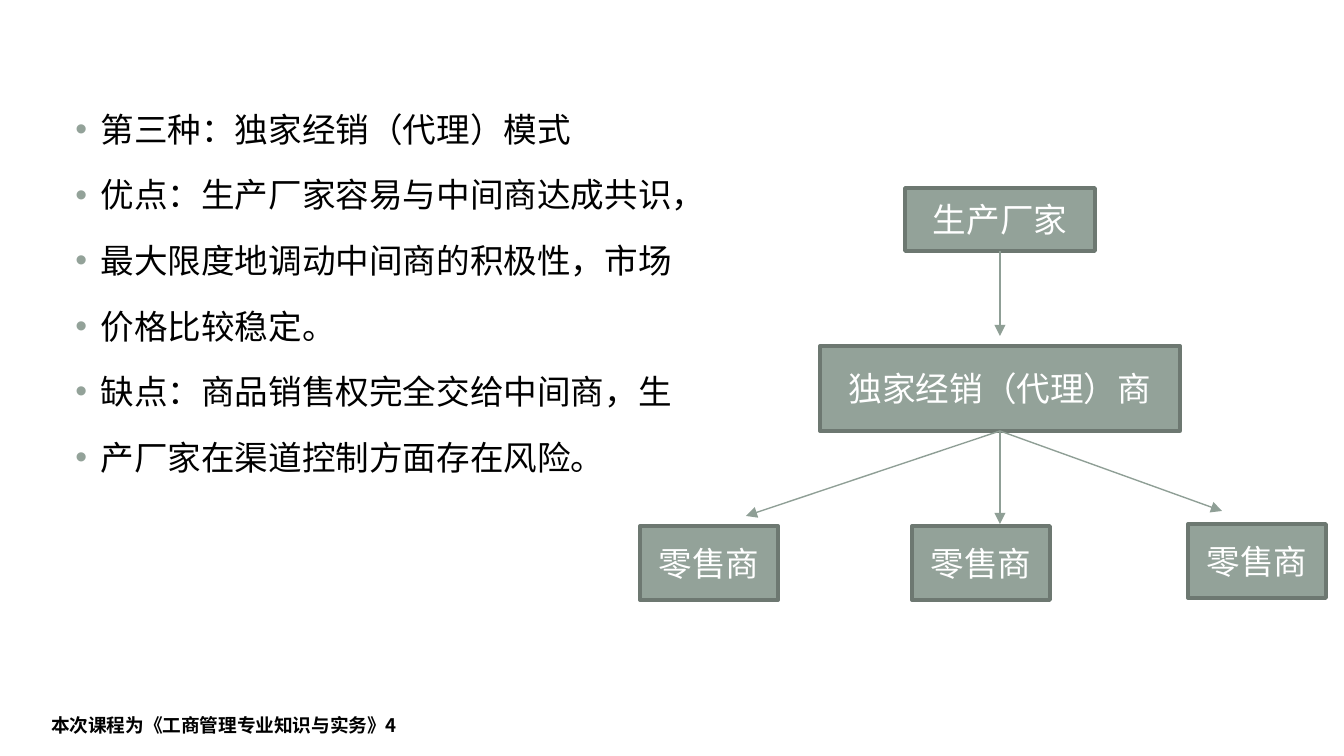
from lxml.etree import SubElement
from pptx import Presentation
from pptx.dml.color import RGBColor
from pptx.enum.shapes import MSO_CONNECTOR, MSO_SHAPE
from pptx.enum.text import MSO_ANCHOR, MSO_AUTO_SIZE, PP_ALIGN
from pptx.oxml.ns import qn
from pptx.util import Pt

EMU_PER_PX = 914400 / 134.4
BLACK = RGBColor(0x00, 0x00, 0x00)
WHITE = RGBColor(0xFF, 0xFF, 0xFF)
SAGE = RGBColor(0x93, 0xA2, 0x99)
DARK_SAGE = RGBColor(0x6D, 0x78, 0x71)
ARROW_SAGE = RGBColor(0x8F, 0x9F, 0x96)
TEXT_FONT = "Noto Sans CJK SC"
BOX_FONT = "Quicksand"
BOTTOM = 2

POINTS = [
    "第三种：独家经销（代理）模式",
    "优点：生产厂家容易与中间商达成共识，",
    "最大限度地调动中间商的积极性，市场",
    "价格比较稳定。",
    "缺点：商品销售权完全交给中间商，生",
    "产厂家在渠道控制方面存在风险。",
]
RETAILER_CORNERS = [(640, 526), (912, 526), (1188, 524)]
RETAILER_ARROW_ENDS = [(746, 516), (1000, 524), (1222, 511)]


def px(*lengths):
    """Turn pixel lengths into a list of EMU."""
    return [round(length * EMU_PER_PX) for length in lengths]


def format_paragraph(paragraph, size, color, font_name, bold=False):
    for span in paragraph.runs:
        span.font.size = Pt(size)
        span.font.bold = bold
        span.font.color.rgb = color
        span.font.name = font_name
        if font_name == TEXT_FONT:
            SubElement(span.font._element, qn("a:ea"), typeface=font_name)


def add_bullet(paragraph):
    properties = paragraph._p.get_or_add_pPr()
    indent, hanging = px(37, -25)
    properties.set("marL", str(indent))
    properties.set("indent", str(hanging))
    color = SubElement(properties, qn("a:buClr"))
    SubElement(color, qn("a:srgbClr"), val=str(SAGE))
    SubElement(properties, qn("a:buFont"), typeface="Arial")
    SubElement(properties, qn("a:buChar"), char="•")


def fill_body(body):
    body.left, body.top, body.width, body.height = px(50, 82, 1294, 593)
    frame = body.text_frame
    frame.text = "\n".join(POINTS)
    frame.auto_size = MSO_AUTO_SIZE.NONE
    frame.vertical_anchor = MSO_ANCHOR.TOP
    for paragraph in frame.paragraphs:
        paragraph.line_spacing = 1.5
        paragraph.space_before = Pt(2.7)
        add_bullet(paragraph)
        format_paragraph(paragraph, 18, BLACK, TEXT_FONT)


def add_footer(slide):
    footer = slide.shapes.add_textbox(*px(38, 707, 848, 36))
    frame = footer.text_frame
    frame.word_wrap = True
    frame.text = "本次课程为《工商管理专业知识与实务》4"
    format_paragraph(frame.paragraphs[0], 10, BLACK, TEXT_FONT, bold=True)


def add_box(slide, text, left, top, width, height):
    box = slide.shapes.add_shape(MSO_SHAPE.RECTANGLE, *px(left, top, width, height))
    box.shadow.inherit = False
    box.fill.solid()
    box.fill.fore_color.rgb = SAGE
    box.line.color.rgb = DARK_SAGE
    box.line.width = Pt(2)
    frame = box.text_frame
    frame.text = text
    frame.vertical_anchor = MSO_ANCHOR.MIDDLE
    paragraph = frame.paragraphs[0]
    paragraph.alignment = PP_ALIGN.CENTER
    format_paragraph(paragraph, 18, WHITE, BOX_FONT)
    return box


def add_arrow(slide, box, end_x, end_y):
    """Draw an arrow from the bottom middle of a box to a point."""
    start = box.left + box.width // 2, box.top + box.height
    arrow = slide.shapes.add_connector(
        MSO_CONNECTOR.STRAIGHT, *start, *px(end_x, end_y))
    arrow.begin_connect(box, BOTTOM)
    arrow.line.color.rgb = ARROW_SAGE
    arrow.line.width = Pt(0.75)
    SubElement(arrow.line._get_or_add_ln(), qn("a:tailEnd"), type="triangle")
    SubElement(arrow._element.spPr, qn("a:effectLst"))


def main():
    deck = Presentation()
    deck.slide_width, deck.slide_height = px(1344, 756)
    slide = deck.slides.add_slide(deck.slide_layouts[1])
    title = slide.shapes.title._element
    title.getparent().remove(title)

    add_footer(slide)
    fill_body(slide.placeholders[1])

    producer = add_box(slide, "生产厂家", 905, 188, 190, 63)
    dealer = add_box(slide, "独家经销（代理）商", 820, 346, 360, 85)
    for left, top in RETAILER_CORNERS:
        add_box(slide, "零售商", left, top, 138, 74)

    add_arrow(slide, producer, 1000, 336)
    for end_x, end_y in RETAILER_ARROW_ENDS:
        add_arrow(slide, dealer, end_x, end_y)

    deck.save("out.pptx")


if __name__ == "__main__":
    main()
